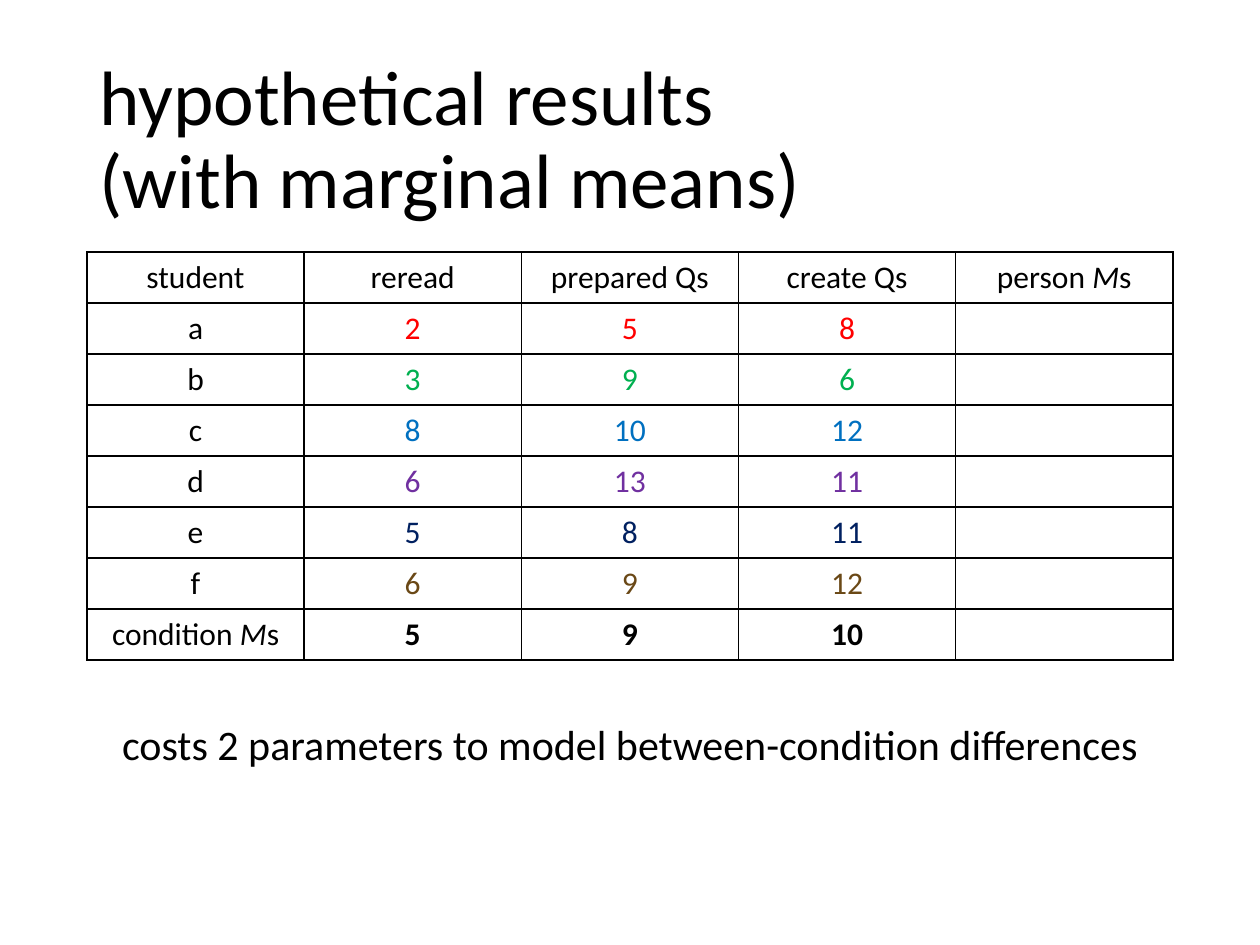
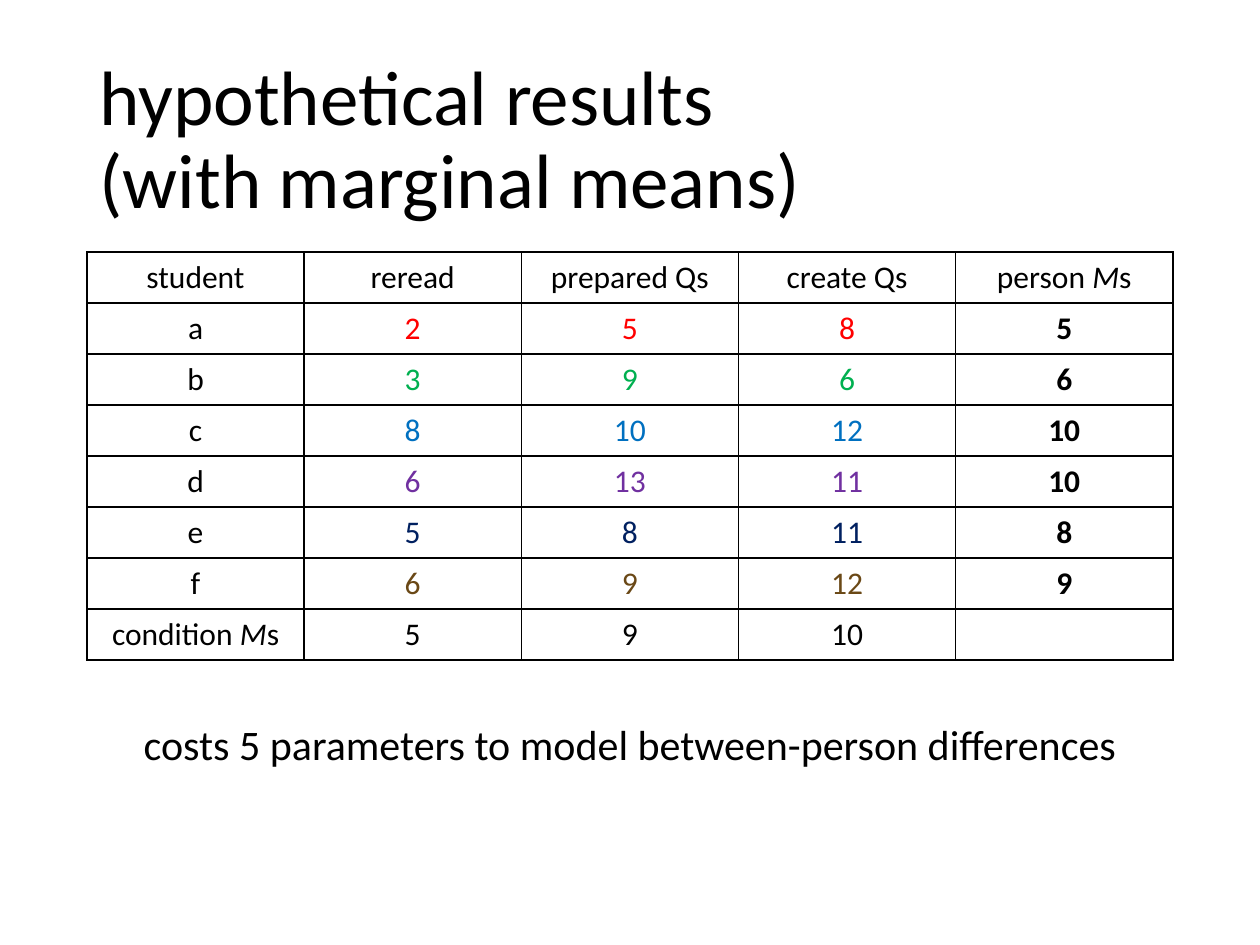
from dataclasses import dataclass
from lxml.etree import SubElement
from pptx import Presentation
from pptx.dml.color import RGBColor
from pptx.enum.text import MSO_ANCHOR, MSO_AUTO_SIZE, PP_ALIGN
from pptx.oxml.ns import qn
from pptx.util import Inches, Pt


@dataclass(frozen=True)
class Theme:
    face: str = "Calibri"
    ink: str = "000000"
    paper: str = "FFFFFF"
    hues: tuple = ("FF0000", "00B050", "0070C0", "7030A0", "002060", "6A4816")
    title: int = 44
    note: int = 24
    cell: int = 18
    rule: int = 1


@dataclass(frozen=True)
class Box:
    """A region, in shares of the slide's size."""
    left: float
    top: float
    width: float
    height: float

    def place(self):
        return (int(self.left * WIDE), int(self.top * HIGH),
                int(self.width * WIDE), int(self.height * HIGH))


THEME = Theme()
WIDE, HIGH = Inches(10), Inches(7.5)
EDGE = 0.069
SPAN = 1 - 2 * EDGE
HEAD = Box(EDGE, 0.4 / 7.5, SPAN, 1.45 / 7.5)
GRID = Box(EDGE, 2 / 7.5, SPAN, 3.24 / 7.5)

TITLE = ("hypothetical results", "(with marginal means)")
LABELS = ("student", "reread", "prepared Qs", "create Qs", "person *M*s")
SCORES = {
    "a": (2, 5, 8),
    "b": (3, 9, 6),
    "c": (8, 10, 12),
    "d": (6, 13, 11),
    "e": (5, 8, 11),
    "f": (6, 9, 12),
}


def style(item, **values):
    for name, value in values.items():
        setattr(item, name, value)


def write(para, text, size, hue=THEME.ink, bold=False):
    """Add text to a paragraph; words between stars are italic."""
    for i, part in enumerate(str(text).split("*")):
        if part:
            run = para.add_run()
            run.text = part
            style(run.font, name=THEME.face, size=Pt(size), bold=bold,
                  italic=i % 2 == 1)
            run.font.color.rgb = RGBColor.from_string(hue)


def mean(nums):
    return round(sum(nums) / len(nums))


# Title
def add_title(slide, box):
    frame = slide.shapes.add_textbox(*box.place()).text_frame
    style(frame, word_wrap=True, vertical_anchor=MSO_ANCHOR.MIDDLE)
    para = frame.paragraphs[0]
    para.line_spacing = 0.9
    for i, line in enumerate(TITLE):
        if i:
            para.add_line_break()
        write(para, line, THEME.title)


# Table cell with a thin frame
def fill_cell(cell, text, hue, bold):
    props = cell._tc.get_or_add_tcPr()
    for side in ("lnL", "lnR", "lnT", "lnB"):
        line = SubElement(props, qn(f"a:{side}"), w=str(Pt(THEME.rule)))
        paint = SubElement(line, qn("a:solidFill"))
        SubElement(paint, qn("a:srgbClr"), val=THEME.ink)
    cell.fill.background()
    para = cell.text_frame.paragraphs[0]
    para.alignment = PP_ALIGN.CENTER
    write(para, text, THEME.cell, hue, bold)


# Scores with their means; the modelled means are bold
def add_scores(slide, box, by_person):
    rows = [[(label, THEME.ink, False) for label in LABELS]]
    for (name, nums), hue in zip(SCORES.items(), THEME.hues):
        rows.append([(name, THEME.ink, False),
                     *((num, hue, False) for num in nums),
                     (mean(nums) if by_person else "", THEME.ink, True)])
    rows.append([("condition *M*s", THEME.ink, False),
                 *((mean(nums), THEME.ink, not by_person)
                   for nums in zip(*SCORES.values())),
                 ("", THEME.ink, False)])

    left, top, width, height = box.place()
    table = slide.shapes.add_table(len(rows), len(LABELS), left, top,
                                   width, height).table
    style(table, first_row=False, horz_banding=False)
    for col in table.columns:
        col.width = width // len(LABELS)
    for r, row in enumerate(rows):
        table.rows[r].height = height // len(rows)
        for c, item in enumerate(row):
            fill_cell(table.cell(r, c), *item)


# Note centred below the table
def add_note(slide, box, text):
    frame = slide.shapes.add_textbox(*box.place()).text_frame
    style(frame, word_wrap=False, auto_size=MSO_AUTO_SIZE.SHAPE_TO_FIT_TEXT)
    para = frame.paragraphs[0]
    para.alignment = PP_ALIGN.CENTER
    write(para, text, THEME.note)


def add_page(deck, count, kind, share):
    slide = deck.slides.add_slide(deck.slide_layouts[6])
    paint = slide.background.fill
    paint.solid()
    paint.fore_color.rgb = RGBColor.from_string(THEME.paper)
    add_title(slide, HEAD)
    add_scores(slide, GRID, kind == "person")
    note = Box((1 - share) / 2, 5.65 / 7.5, share, 0.5 / 7.5)
    add_note(slide, note,
             f"costs {count} parameters to model between-{kind} differences")


def main():
    deck = Presentation()
    style(deck, slide_width=WIDE, slide_height=HIGH)
    add_page(deck, len(LABELS) - 3, "condition", 0.83)
    add_page(deck, len(SCORES) - 1, "person", 0.8)
    deck.save("out.pptx")


if __name__ == "__main__":
    main()
